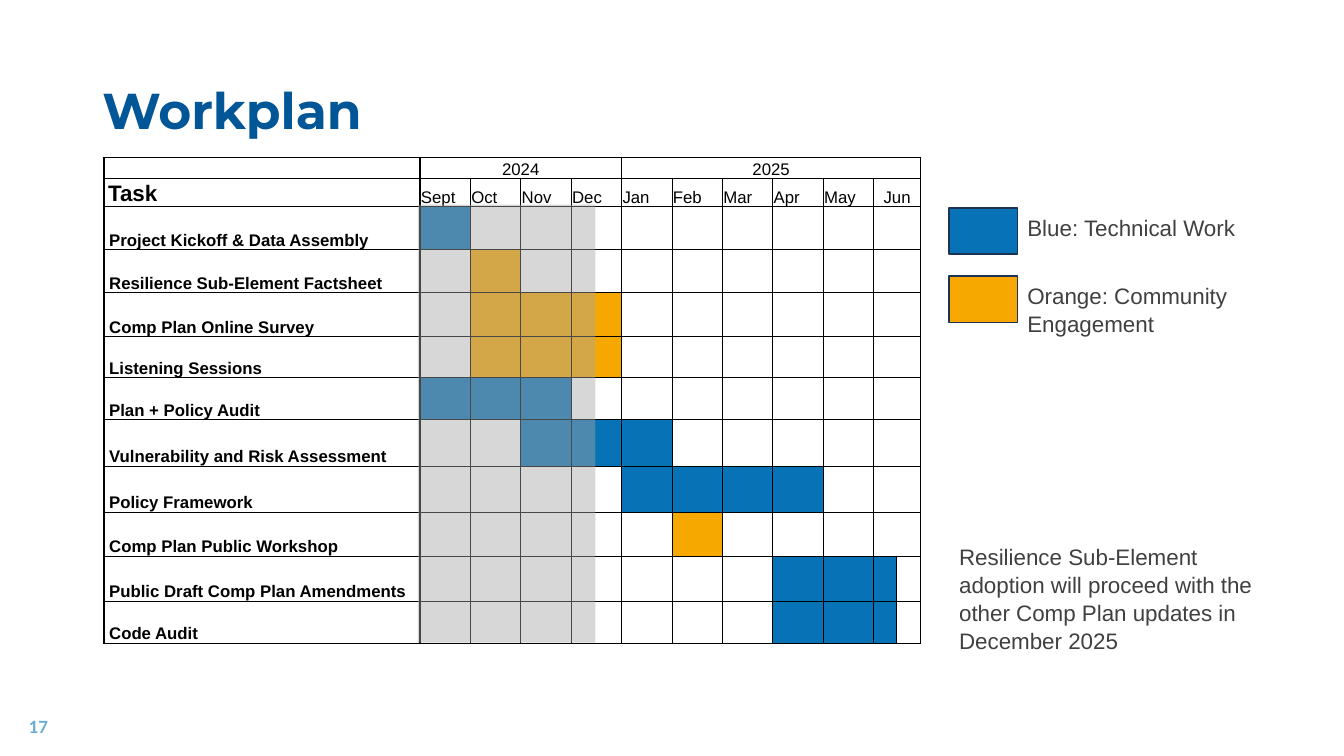
from lxml import etree
from pptx import Presentation
from pptx import util as u
from pptx.dml.color import RGBColor
from pptx.enum import shapes, text
from pptx.oxml import ns

PX = 9525  # EMU per px, 96 px to the inch
BLUE, ORANGE = "0872B6", "F7A800"
MONTHS = ["Sept", "Oct", "Nov", "Dec", "Jan", "Feb", "Mar", "Apr", "May", "Jun"]
JUNE, LAST = 10, 11  # June is split into two half columns
# task, colour, first and last filled column
TASKS = [
    ("Project Kickoff & Data Assembly", BLUE, 1, 1),
    ("Resilience Sub-Element Factsheet", ORANGE, 2, 2),
    ("Comp Plan Online Survey", ORANGE, 2, 4),
    ("Listening Sessions", ORANGE, 2, 4),
    ("Plan + Policy Audit", BLUE, 1, 3),
    ("Vulnerability and Risk Assessment", BLUE, 3, 5),
    ("Policy Framework", BLUE, 5, 8),
    ("Comp Plan Public Workshop", ORANGE, 6, 6),
    ("Public Draft Comp Plan Amendments", BLUE, 8, 10),
    ("Code Audit", BLUE, 8, 10),
]
COLUMNS = [301] + [48] * 9 + [22, 23]
ROWS = [20, 25, 41, 41, 42, 39, 40, 44, 44, 42, 43, 40]
BODY = {"size": u.Pt(16), "name": "Arial"}


def px(*lengths):
    return [u.Emu(round(length * PX)) for length in lengths]


def colour(value):
    return RGBColor.from_string(value)


def apply(target, values):
    for name, value in values.items():
        setattr(target, name, value)


def write(frame, words, font, ink, **para_format):
    """Fill the first paragraph of a text frame with one formatted span."""
    para = frame.paragraphs[0]
    apply(para, para_format)
    span = para.add_run()
    span.text = words
    apply(span.font, font)
    span.font.color.rgb = colour(ink)


def add_text(page, box, words, font, ink, anchor=text.MSO_ANCHOR.TOP, **para_format):
    frame = page.shapes.add_textbox(*px(*box)).text_frame
    apply(frame, {"word_wrap": True, "vertical_anchor": anchor})
    write(frame, words, font, ink, **para_format)


def add_block(page, box, fill, outline=None):
    block = page.shapes.add_shape(shapes.MSO_SHAPE.RECTANGLE, *px(*box))
    block.shadow.inherit = False
    block.fill.solid()
    block.fill.fore_color.rgb = colour(fill)
    if outline:
        block.line.color.rgb = colour(outline)
        block.line.width = u.Pt(1)
    else:
        block.line.fill.background()
    return block


def add_title(page, box):
    title = page.shapes.title
    apply(title, dict(zip(("left", "top", "width", "height"), px(*box))))
    title.text_frame.vertical_anchor = text.MSO_ANCHOR.MIDDLE
    font = {"size": u.Pt(36), "name": "Montserrat", "bold": True}
    write(title.text_frame, "Workplan", font, "005696",
          alignment=text.PP_ALIGN.LEFT, line_spacing=0.9)


def set_borders(cell, row, column):
    """Draw thick lines round the table and between years, thin ones elsewhere."""
    right = column + (cell.span_width if cell.is_merge_origin else 1)
    thick_columns, thick_rows = (0, 1, 5, len(COLUMNS)), (0, len(ROWS))
    edges = {"L": column in thick_columns, "R": right in thick_columns,
             "T": row in thick_rows, "B": row + 1 in thick_rows}
    properties = cell._tc.get_or_add_tcPr()
    for side, thick in edges.items():
        line = etree.SubElement(properties, ns.qn(f"a:ln{side}"),
                                w=str(u.Pt(1 if thick else 0.5)))
        fill = etree.SubElement(line, ns.qn("a:solidFill"))
        etree.SubElement(fill, ns.qn("a:srgbClr"), val="000000")


def format_cell(cell, row, column):
    margin = u.Inches(0.01)
    apply(cell, {"margin_left": margin, "margin_right": margin, "margin_top": margin,
                 "margin_bottom": 0, "vertical_anchor": text.MSO_ANCHOR.BOTTOM})
    set_borders(cell, row, column)
    cell.fill.background()
    para = cell.text_frame.paragraphs[0]
    etree.SubElement(para._p, ns.qn("a:endParaRPr"), sz="1200")


def add_schedule(page, box):
    grid = page.shapes.add_table(len(ROWS), len(COLUMNS), *px(*box)).table
    apply(grid, {"first_row": False, "horz_banding": False})
    for column, width in zip(grid.columns, px(*COLUMNS)):
        column.width = width
    for row, height in zip(grid.rows, px(*ROWS)):
        row.height = height

    grid.cell(0, 1).merge(grid.cell(0, 4))
    grid.cell(0, 5).merge(grid.cell(0, LAST))
    grid.cell(1, JUNE).merge(grid.cell(1, LAST))
    for row, (_, _, _, last) in enumerate(TASKS, 2):
        if last < JUNE:
            grid.cell(row, JUNE).merge(grid.cell(row, LAST))
    for row in range(len(ROWS)):
        for column in range(len(COLUMNS)):
            format_cell(grid.cell(row, column), row, column)

    plain = {"size": u.Pt(12), "name": "Arial", "bold": False}
    bold = {**plain, "bold": True}
    centre, left = text.PP_ALIGN.CENTER, text.PP_ALIGN.LEFT
    for column, year in ((1, "2024"), (5, "2025")):
        write(grid.cell(0, column).text_frame, year, plain, "000000", alignment=centre)
    for column, month in enumerate(MONTHS, 1):
        write(grid.cell(1, column).text_frame, month, plain, "000000",
              alignment=centre if column == JUNE else left)
    heading = grid.cell(1, 0)
    heading.margin_left = px(4)[0]
    write(heading.text_frame, "Task", {**bold, "size": u.Pt(16)}, "000000")
    for row, (task, fill, first, last) in enumerate(TASKS, 2):
        label = grid.cell(row, 0)
        label.margin_left = px(5)[0]
        write(label.text_frame, task, bold, "000000")
        for column in range(first, last + 1):
            cell = grid.cell(row, column)
            cell.fill.solid()
            cell.fill.fore_color.rgb = colour(fill)


def add_legend(page, box):
    left, top, width, height = box
    swatch, pitch = 64, 65
    entries = ((BLUE, "Blue: Technical Work"), (ORANGE, "Orange: Community Engagement"))
    for index, (fill, words) in enumerate(entries):
        y = top + index * pitch
        add_block(page, (left, y, swatch + 1, 44), fill, "1E3256")
        add_text(page, (left + swatch + 1, y, width - swatch - 1, height - pitch),
                 words, BODY, "404040", line_spacing=1.05)


def add_elapsed(page, box):
    """Shade the part of the schedule that has passed."""
    shade = add_block(page, box, "A6A6A6")
    tint = shade._element.spPr.find(".//" + ns.qn("a:srgbClr"))
    etree.SubElement(tint, ns.qn("a:alpha"), val="44000")


def main():
    deck = Presentation()
    deck.slide_width, deck.slide_height = px(1280, 720)
    page = deck.slides.add_slide(deck.slide_layouts.get_by_name("Title Only"))
    add_title(page, (88, 38, 1104, 139))
    add_text(page, (18, 673, 288, 38), "17",
             {"size": u.Pt(12), "name": "Lato", "bold": True}, "66AAD3",
             text.MSO_ANCHOR.MIDDLE)
    add_text(page, (904, 511, 320, 146),
             "Resilience Sub-Element adoption will proceed with the other "
             "Comp Plan updates in December 2025", BODY, "404040", line_spacing=1.05)
    add_schedule(page, (99, 150, sum(COLUMNS), sum(ROWS)))
    add_legend(page, (904, 198, 376, 125))
    add_elapsed(page, (398, 195, 169, 417))
    deck.save("out.pptx")


if __name__ == "__main__":
    main()
